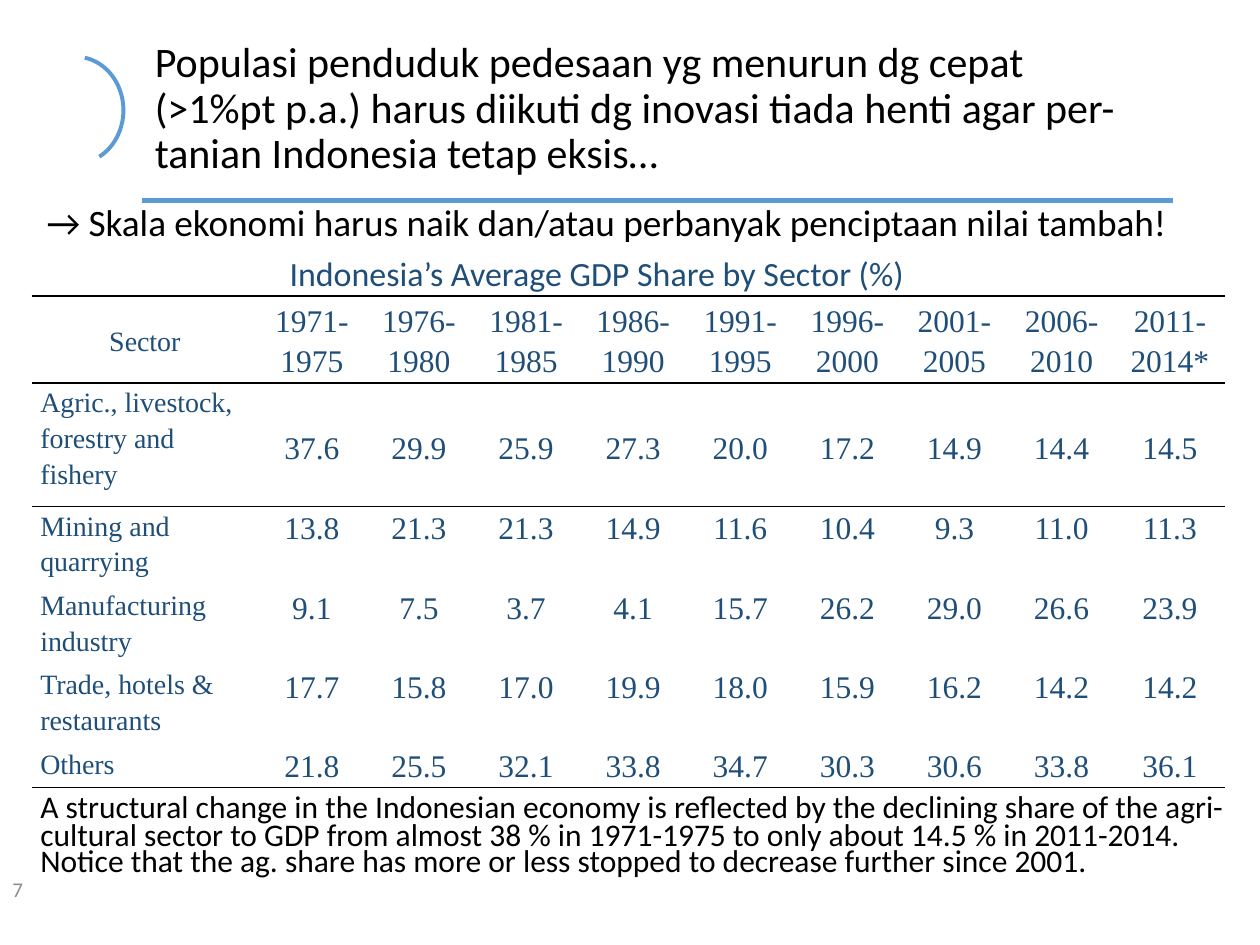
from dataclasses import dataclass

from lxml import etree
from pptx import Presentation
from pptx.dml.color import RGBColor
from pptx.enum import shapes, text
from pptx.oxml import ns
from pptx.util import Emu, Pt

PX = 9144  # 100 px to the inch
BLACK = RGBColor(0x00, 0x00, 0x00)
NAVY = RGBColor(0x1F, 0x4E, 0x79)
BLUE = RGBColor(0x5B, 0x9B, 0xD5)
GRAY = RGBColor(0x8C, 0x8C, 0x8C)
NO_STYLE = "{2D5ABB26-0587-4C30-8999-92F81FD0307C}"
LEFT, CENTER = text.PP_ALIGN.LEFT, text.PP_ALIGN.CENTER
TOP, MIDDLE = text.MSO_ANCHOR.TOP, text.MSO_ANCHOR.MIDDLE


@dataclass(frozen=True)
class TextBlock:
    content: str
    left: int
    top: int
    width: int
    height: int
    size: float
    color: RGBColor = BLACK
    align: text.PP_ALIGN = LEFT
    anchor: text.MSO_ANCHOR = MIDDLE
    first_spacing: float = 0.9
    spacing: float = 0.9
    margin_left: int = 10


@dataclass(frozen=True)
class SectorRow:
    label: str
    values: str
    height: int
    value_offset: int = 0


TEXT_BLOCKS = [
    TextBlock("Populasi penduduk pedesaan yg menurun dg cepat \v"
              "(>1%pt p.a.) harus diikuti dg inovasi tiada henti agar per-"
              "tanian Indonesia tetap eksis…", 113, 40, 818, 94, 24),
    TextBlock("→ Skala ekonomi harus naik dan/atau perbanyak penciptaan nilai tambah!",
              20, 158, 918, 40, 21.3, margin_left=17),
    TextBlock("Indonesia’s Average GDP Share by Sector (%)",
              15, 199, 918, 40, 19.4, NAVY, CENTER),
    TextBlock("A structural change in the Indonesian economy is reflected by the "
              "declining share of the agri-\n"
              "cultural sector to GDP from almost 38 % in 1971-1975 to only about "
              "14.5 % in 2011-2014.\n"
              "Notice that the ag. share has more or less stopped to decrease "
              "further since 2001.",
              5, 620, 994, 84, 18, anchor=TOP, first_spacing=1.0, spacing=0.7,
              margin_left=27),
    TextBlock("7", 0, 686, 225, 40, 12, GRAY, first_spacing=1.0),
]

PERIODS = ["1971- 1975", "1976- 1980", "1981- 1985", "1986- 1990", "1991- 1995",
           "1996- 2000", "2001- 2005", "2006- 2010", "2011- 2014*"]
HEADER_HEIGHT = 69
COLUMN_WIDTHS = [180] + [85] * 8 + [87]
SECTORS = [
    SectorRow("Agric., livestock,\nforestry and\nfishery",
              "37.6 29.9 25.9 27.3 20.0 17.2 14.9 14.4 14.5", 98, 34),
    SectorRow("Mining and\nquarrying",
              "13.8 21.3 21.3 14.9 11.6 10.4 9.3 11.0 11.3", 63),
    SectorRow("Manufacturing industry",
              "9.1 7.5 3.7 4.1 15.7 26.2 29.0 26.6 23.9", 63),
    SectorRow("Trade, hotels &\nrestaurants",
              "17.7 15.8 17.0 19.9 18.0 15.9 16.2 14.2 14.2", 63),
    SectorRow("Others",
              "21.8 25.5 32.1 33.8 34.7 30.3 30.6 33.8 36.1", 34),
]


def px(length: int) -> Emu:
    return Emu(length * PX)


def format_paragraph(paragraph, font_name: str, size: float, color: RGBColor,
                     align: text.PP_ALIGN, spacing: float) -> None:
    paragraph.alignment = align
    paragraph.line_spacing = spacing
    for run in paragraph.runs:
        run.font.name = font_name
        run.font.size = Pt(size)
        run.font.color.rgb = color


def add_text(slide, block: TextBlock) -> None:
    shape = slide.shapes.add_textbox(px(block.left), px(block.top),
                                     px(block.width), px(block.height))
    frame = shape.text_frame
    frame.word_wrap = True
    frame.vertical_anchor = block.anchor
    frame.margin_left = px(block.margin_left)
    frame.text = block.content
    for index, paragraph in enumerate(frame.paragraphs):
        spacing = block.spacing if index else block.first_spacing
        format_paragraph(paragraph, "Calibri", block.size, block.color,
                         block.align, spacing)


def add_ornaments(slide) -> None:
    """Draw the arc beside the title and the rule below it."""
    arc = slide.shapes.add_shape(shapes.MSO_SHAPE.ARC, px(22), px(45), px(76), px(85))
    arc.adjustments[0], arc.adjustments[1] = 167.99, 37.74
    arc.shadow.inherit = False
    arc.fill.background()
    arc.line.color.rgb = BLUE
    arc.line.width = Pt(2.25)

    rule = slide.shapes.add_connector(shapes.MSO_CONNECTOR.STRAIGHT,
                                      px(113), px(159), px(931), px(159))
    rule.line.color.rgb = BLUE
    rule.line.width = Pt(3)
    etree.SubElement(rule._element.spPr, ns.qn("a:effectLst"))


def set_borders(cell, sides: list[str]) -> None:
    properties = cell._tc.get_or_add_tcPr()
    for index, side in enumerate(sides):
        line = etree.Element(ns.qn(f"a:ln{side}"), w=str(Pt(1)))
        fill = etree.SubElement(line, ns.qn("a:solidFill"))
        etree.SubElement(fill, ns.qn("a:srgbClr"), val=str(BLACK))
        properties.insert(index, line)


def fill_cell(cell, content: str, size: int, align: text.PP_ALIGN,
              anchor: text.MSO_ANCHOR, margin_top: int, sides: list[str]) -> None:
    cell.text = content
    cell.vertical_anchor = anchor
    cell.margin_left = cell.margin_right = px(7)
    cell.margin_top, cell.margin_bottom = px(margin_top), 0
    cell.fill.background()
    set_borders(cell, sides)
    for paragraph in cell.text_frame.paragraphs:
        format_paragraph(paragraph, "Times New Roman", size, NAVY, align, 1.15)


def add_sector_table(slide) -> None:
    heights = [HEADER_HEIGHT] + [sector.height for sector in SECTORS]
    frame = slide.shapes.add_table(len(heights), len(COLUMN_WIDTHS), px(25), px(235),
                                   px(sum(COLUMN_WIDTHS)), px(sum(heights)))
    table = frame.table
    table.first_row = table.horz_banding = False
    table._tbl.tblPr.find(ns.qn("a:tableStyleId")).text = NO_STYLE
    for column, width in zip(table.columns, COLUMN_WIDTHS):
        column.width = px(width)
    for row, height in zip(table.rows, heights):
        row.height = px(height)

    for column, content in enumerate(["Sector"] + PERIODS):
        fill_cell(table.cell(0, column), content, 18 if column else 16,
                  CENTER, MIDDLE, 0, ["T", "B"])
    for row, sector in enumerate(SECTORS, start=1):
        sides = {1: ["T"], len(SECTORS): ["B"]}.get(row, [])
        fill_cell(table.cell(row, 0), sector.label, 16, LEFT, TOP, 0, sides)
        for column, value in enumerate(sector.values.split(), start=1):
            fill_cell(table.cell(row, column), value, 18, CENTER, TOP,
                      sector.value_offset, sides)


def main() -> None:
    presentation = Presentation()
    presentation.slide_width, presentation.slide_height = px(1000), px(750)
    slide = presentation.slides.add_slide(presentation.slide_layouts[6])
    add_ornaments(slide)
    add_sector_table(slide)
    for block in TEXT_BLOCKS:
        add_text(slide, block)
    presentation.save("out.pptx")


if __name__ == "__main__":
    main()
